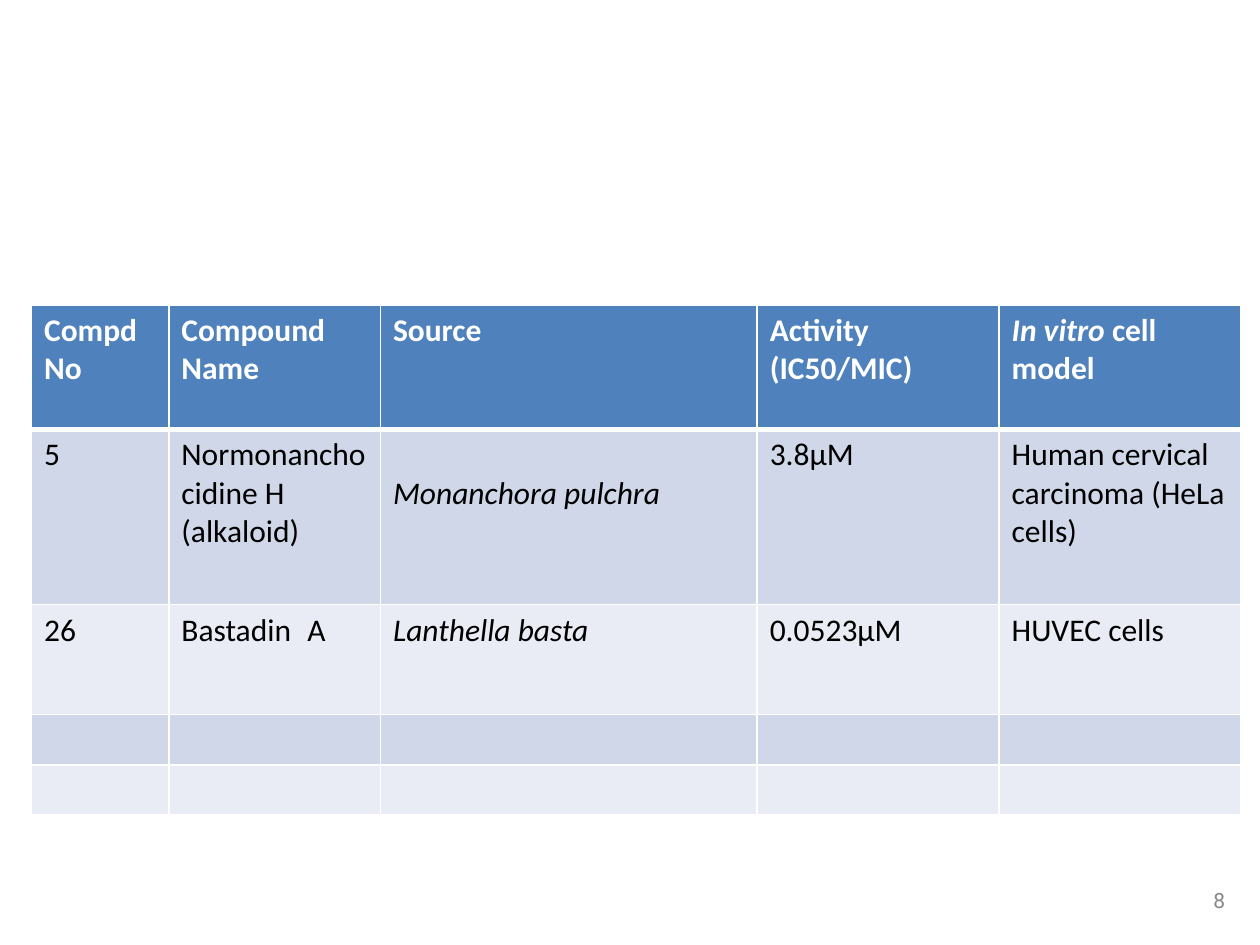
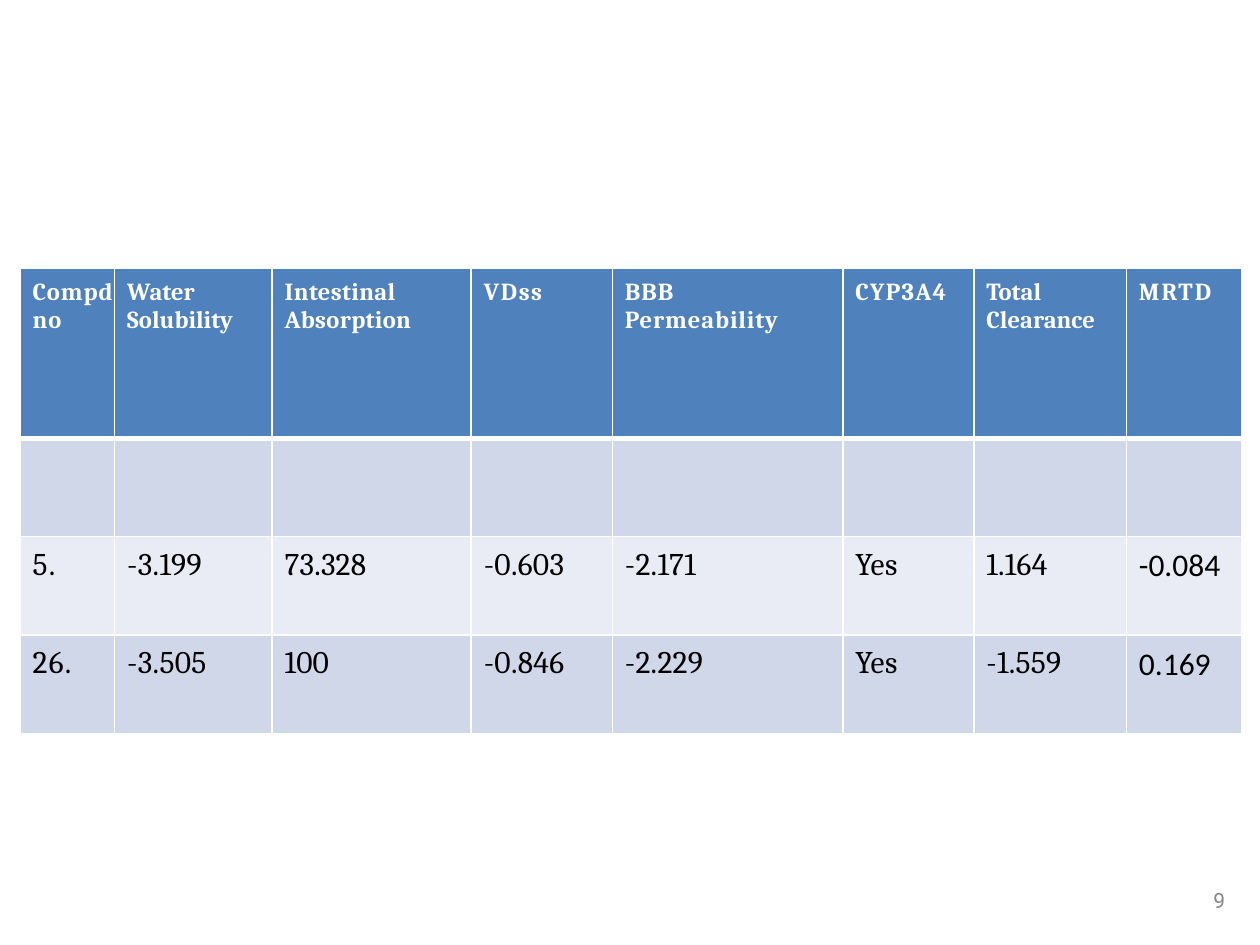
"""Build two slides of compound tables: activity data and predicted properties."""
from itertools import repeat

from lxml.etree import SubElement
from pptx import Presentation
from pptx.dml.color import RGBColor
from pptx.oxml.ns import qn
from pptx.util import Inches, Pt

COLORS = {
    "header": "4F81BD",
    "odd_row": "D0D7E8",
    "even_row": "E9ECF4",
    "border": "FFFFFF",
    "header_text": "FFFFFF",
    "body_text": "000000",
    "page_number": "888888",
}


class Deck:
    """Hold the presentation, its style and the current slide."""

    def __init__(self):
        """Start a 4:3 presentation."""
        self.presentation = Presentation()
        self.presentation.slide_width = Inches(10)
        self.presentation.slide_height = Inches(7.5)

    def add_slide(self, number):
        """Add a blank slide with its page number."""
        self.slide = self.presentation.slides.add_slide(self.presentation.slide_layouts[6])
        footer = self.slide.shapes.add_textbox(
            Inches(9.63), Inches(7.05), Inches(0.23), Inches(0.21)
        ).text_frame
        self.set_margins(footer, (0, 0, 0, 0))
        footer.word_wrap = True
        paragraph = footer.paragraphs[0]
        paragraph.line_spacing = Pt(14.2)
        self.add_run(paragraph, str(number), "page_number", {"name": "Roboto", "size": Pt(12)}, -0.1)

    def set_margins(self, holder, margins):
        """Set left, top, right and bottom margins in inches."""
        for side, margin in zip(("left", "top", "right", "bottom"), margins):
            setattr(holder, f"margin_{side}", Inches(margin))

    def add_run(self, paragraph, text, color, formats, tracking=0):
        """Add a run with a colour, font formats and letter spacing in points."""
        run = paragraph.add_run()
        run.text = text
        for key, value in formats.items():
            setattr(run.font, key, value)
        run.font.color.rgb = RGBColor.from_string(COLORS[color])
        if tracking:
            run._r.get_or_add_rPr().set("spc", str(round(tracking * 100)))

    def add_borders(self, cell, top, bottom):
        """Draw the four borders of a cell with widths in points."""
        properties = cell._tc.get_or_add_tcPr()
        for side, width in zip("LRTB", (1, 1, top, bottom)):
            line = SubElement(properties, qn(f"a:ln{side}"), w=str(Pt(width)))
            fill = SubElement(line, qn("a:solidFill"))
            SubElement(fill, qn("a:srgbClr"), val=COLORS["border"])

    def fill_cell(self, cell, text, color, formats, tracking):
        """Write text into a cell, with parts between asterisks in italics."""
        frame = cell.text_frame
        for line_number, line in enumerate(text.split("\n")):
            paragraph = frame.add_paragraph() if line_number else frame.paragraphs[0]
            for part_number, part in enumerate(line.split("*")):
                if part:
                    italic = {"italic": part_number % 2 == 1}
                    self.add_run(paragraph, part, color, formats | italic, tracking)

    def add_table(self, left, top, widths, heights, rows, margins,
                  fonts, header_size, header_tracking=(), body_tracking=()):
        """Add a banded table with a header row and return it."""
        table = self.slide.shapes.add_table(
            len(rows), len(widths), Inches(left), Inches(top),
            Inches(sum(widths)), Inches(sum(heights)),
        ).table
        for column, width in zip(table.columns, widths):
            column.width = Inches(width)
        for index, (row, height, texts) in enumerate(zip(table.rows, heights, rows)):
            row.height = Inches(height)
            is_header = index == 0
            band = "header" if is_header else ("even_row", "odd_row")[index % 2]
            color = "header_text" if is_header else "body_text"
            size = Pt(header_size if is_header else 18)
            trackings = (header_tracking if is_header else body_tracking) or repeat(0)
            for cell, text, font, tracking in zip(row.cells, texts, fonts, trackings):
                self.set_margins(cell, margins)
                self.add_borders(cell, 3 if index == 1 else 1, 3 if is_header else 1)
                cell.fill.solid()
                cell.fill.fore_color.rgb = RGBColor.from_string(COLORS[band])
                name = fonts[0] if is_header else font
                formats = {"name": name, "size": size, "bold": is_header}
                self.fill_cell(cell, text, color, formats, tracking)
        return table


def add_activity_slide(deck):
    """Add the table of compound sources and activities."""
    deck.add_slide(8)
    activities = deck.add_table(
        0.25, 2.42,
        widths=(1.09, 1.68, 2.99, 1.92, 1.92),
        heights=(0.99, 1.39, 0.87, 0.4, 0.4),
        rows=(
            ("Compd No", "Compound Name", "Source", "Activity\n(IC50/MIC)", "*In vitro* cell model"),
            ("5", "Normonanchocidine H\n(alkaloid)", "*Monanchora pulchra*", "3.8μM",
             "Human cervical carcinoma (HeLa cells)"),
            ("26", "Bastadin \tA", "*Lanthella basta*", "0.0523μM", "HUVEC cells"),
            ("",) * 5,
            ("",) * 5,
        ),
        margins=(0.1, 0.05, 0.1, 0.05),
        fonts=("Calibri",) * 5,
        header_size=18,
    )
    activities.cell(1, 2).margin_top = Inches(0.36)


def add_properties_slide(deck):
    """Add the table of predicted properties."""
    deck.add_slide(9)
    deck.add_table(
        0.16, 2.13,
        widths=(0.75, 1.25, 1.58, 1.12, 1.83, 1.04, 1.21, 0.92),
        heights=(1.35, 0.78, 0.78, 0.78),
        rows=(
            ("Compd no", "Water Solubility", "Intestinal Absorption", "VDss",
             "BBB\nPermeability", "CYP3A4", "Total Clearance", "MRTD"),
            ("",) * 8,
            ("5.", "-3.199", "73.328", "-0.603", "-2.171", "Yes", "1.164", "-0.084"),
            ("26.", "-3.505", "100", "-0.846", "-2.229", "Yes", "-1.559", "0.169"),
        ),
        margins=(0.1, 0.08, 0, 0),
        fonts=("Cambria",) * 7 + ("Calibri",),
        header_size=14,
        header_tracking=(0.5, 0, 0.2, 0.9, 0.5, 0.7, 0, 1.2),
        body_tracking=(0.7, 0.2, 0.1, 0.2, 0.2, 0.3, 0.2, 0),
    )


def main():
    """Build and save the presentation."""
    deck = Deck()
    add_activity_slide(deck)
    add_properties_slide(deck)
    deck.presentation.save("out.pptx")


if __name__ == "__main__":
    main()
